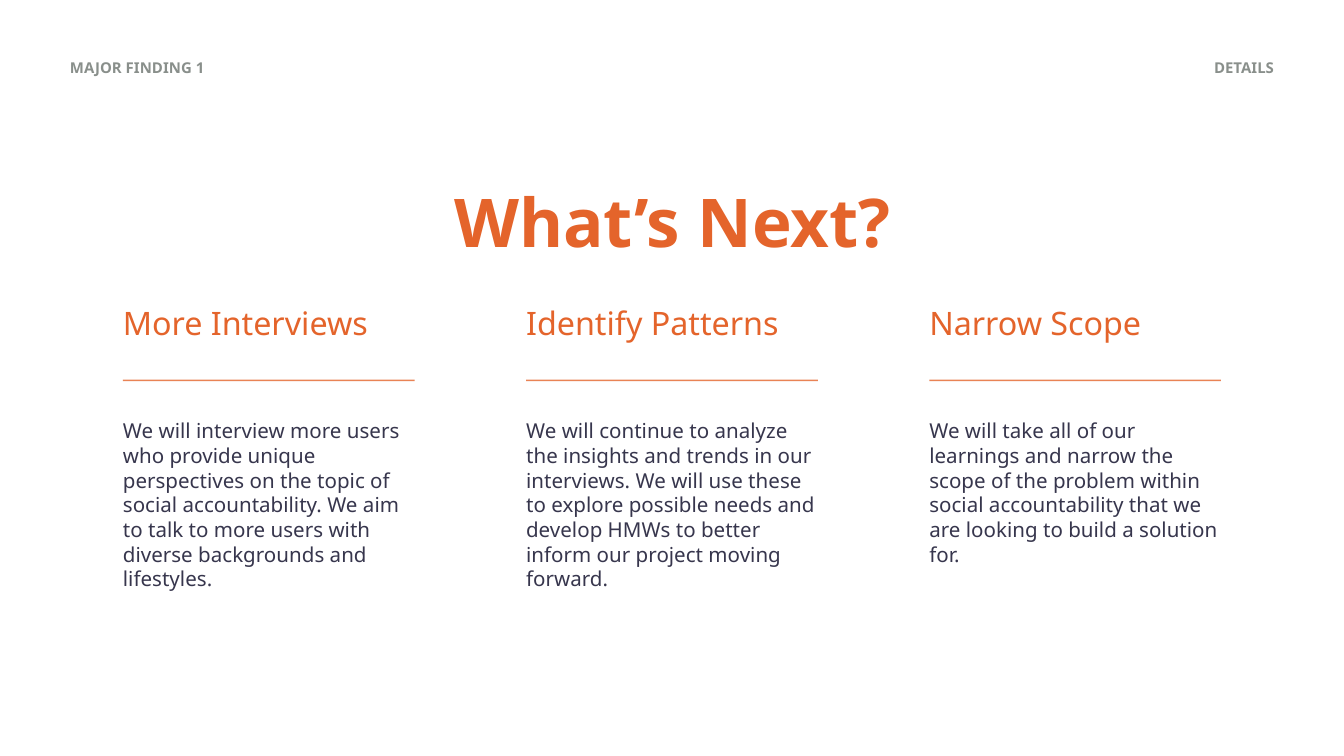
from pptx import Presentation
from pptx.dml.color import RGBColor
from pptx.enum.shapes import MSO_CONNECTOR as CONN
from pptx.enum.text import MSO_ANCHOR as ANCHOR, PP_ALIGN as ALIGN
from pptx.oxml.ns import qn
from pptx.util import Inches, Pt
from lxml.etree import SubElement

W = 10
H = W * 9 / 16
FONT = "Noto Sans"
COLORS = {"orange": "E4642B", "ink": "37364D", "gray": "898F8B"}
MARGIN = 0.52
COL_X, COL_STEP, COL_W = 0.915, 0.3 * W, 2.17
COLUMNS = [
    ("More Interviews",
     "We will interview more users who provide unique perspectives on the topic "
     "of social accountability. We aim to talk to more users with diverse "
     "backgrounds and lifestyles."),
    ("Identify Patterns",
     "We will continue to analyze the insights and trends in our interviews. "
     "We will use these to explore possible needs and develop HMWs to better "
     "inform our project moving forward."),
    ("Narrow Scope",
     "We will take all of our learnings and narrow the scope of the problem "
     "within social accountability that we are looking to build a solution for."),
]


def add_text(s, box, text, size, color, spacing, bold=False,
             align=ALIGN.LEFT, anchor=ANCHOR.TOP):
    tf = s.shapes.add_textbox(*map(Inches, box)).text_frame
    tf.margin_left = tf.margin_right = tf.margin_top = tf.margin_bottom = 0
    tf.word_wrap = True
    tf.vertical_anchor = anchor
    p = tf.paragraphs[0]
    p.alignment = align
    p.line_spacing = spacing
    r = p.add_run()
    r.text = text
    r.font.name, r.font.size, r.font.bold = FONT, Pt(size), bold
    r.font.color.rgb = RGBColor.from_string(COLORS[color])


def add_rule(s, x, y, w):
    """Draw a thin orange line at 80 % opacity."""
    sp = s.shapes.add_connector(CONN.STRAIGHT, *map(Inches, (x, y, x + w, y)))
    sp.line.width = Pt(0.83)
    sp.line.color.rgb = RGBColor.from_string(COLORS["orange"])
    color = sp.line._ln.find(".//" + qn("a:srgbClr"))
    SubElement(color, qn("a:alpha"), val="80000")
    SubElement(sp._element.spPr, qn("a:effectLst"))


def add_header(s, x, y, w, h):
    label_w = 0.365 * W
    for left, text, align in ((x, "MAJOR FINDING 1", ALIGN.LEFT),
                              (x + w - label_w, "DETAILS", ALIGN.RIGHT)):
        add_text(s, (left, y, label_w, h), text, 8, "gray", 1.41, True, align)


def add_title(s, x, y, w, h):
    add_text(s, (x, y, w, h), "What’s Next?", 36, "orange", 1.37, True,
             ALIGN.CENTER, ANCHOR.MIDDLE)


def add_column(s, x, y, w, h, heading, body):
    """Stack a heading, a rule and a body text in the box."""
    rule_y, body_y = y + 0.267 * h, y + 0.388 * h
    add_text(s, (x, y, w, 0.172 * h), heading, 17.3, "orange", 1.15)
    add_rule(s, x, rule_y, w)
    add_text(s, (x, body_y, w, y + h - body_y), body, 11, "ink", Pt(13.2))


def main():
    prs = Presentation()
    prs.slide_width, prs.slide_height = Inches(W), Inches(H)
    s = prs.slides.add_slide(prs.slide_layouts[6])
    add_header(s, MARGIN, 0.068 * H, W - 2 * MARGIN, 0.16)
    add_title(s, 0.324 * W, 0.196 * H, 0.353 * W, 0.153 * H)
    for i, (heading, body) in enumerate(COLUMNS):
        add_column(s, COL_X + i * COL_STEP, 0.393 * H, COL_W, 0.413 * H,
                   heading, body)
    prs.save("out.pptx")


if __name__ == "__main__":
    main()
